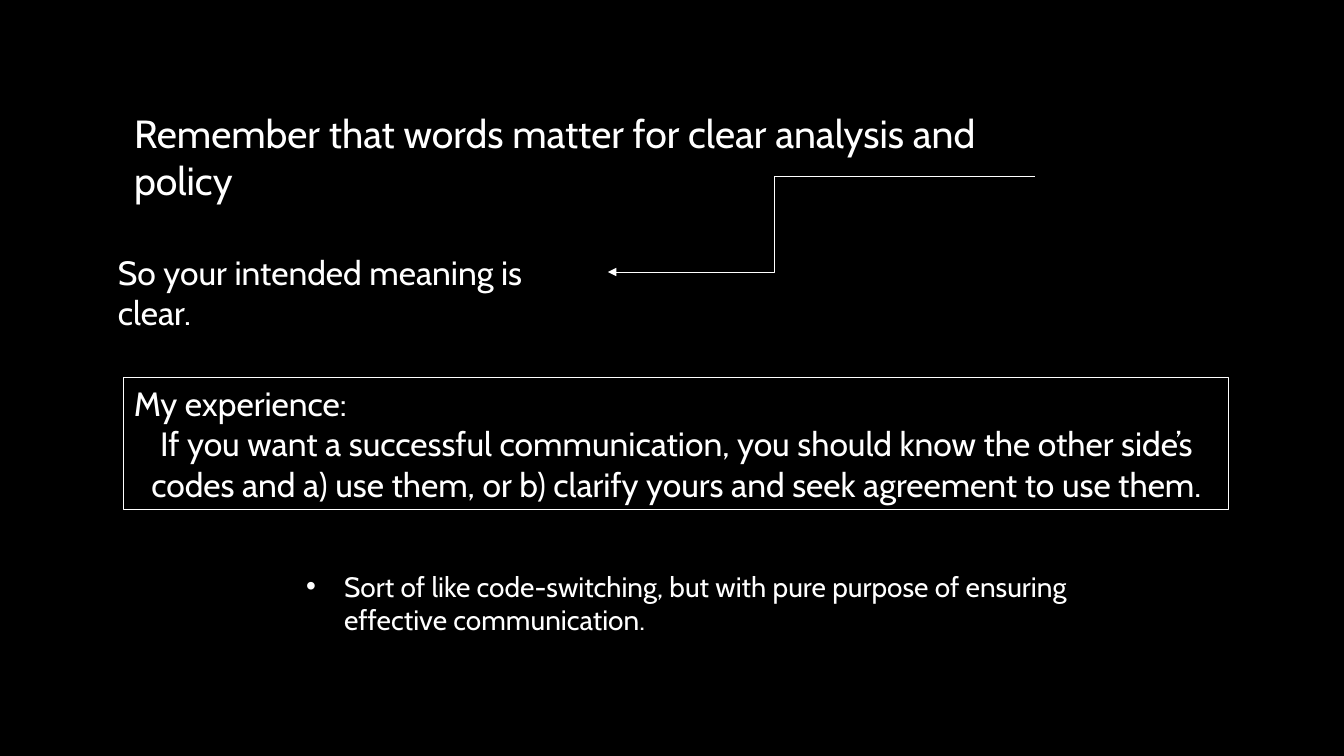
from dataclasses import dataclass

from lxml import etree
from pptx import Presentation
from pptx.dml.color import RGBColor
from pptx.enum.shapes import MSO_CONNECTOR, MSO_SHAPE
from pptx.enum.text import MSO_ANCHOR, MSO_AUTO_SIZE, PP_ALIGN
from pptx.oxml.ns import qn
from pptx.shapes.autoshape import Shape
from pptx.slide import Slide
from pptx.util import Emu, Pt

LEFT, CENTER = PP_ALIGN.LEFT, PP_ALIGN.CENTER
TOP = MSO_ANCHOR.TOP
GROW = MSO_AUTO_SIZE.SHAPE_TO_FIT_TEXT
ELBOW, RECTANGLE = MSO_CONNECTOR.ELBOW, MSO_SHAPE.RECTANGLE

PX_PER_INCH = 100.8
FONT = "Cabin"
WHITE, BLACK = "FFFFFF", "000000"
TITLE_AND_CONTENT = 1


def px(length: int) -> Emu:
    return Emu(round(length * 914400 / PX_PER_INCH))


def color(code: str) -> RGBColor:
    return RGBColor.from_string(code)


@dataclass(frozen=True)
class Box:
    left: int
    top: int
    width: int
    height: int

    def emu(self) -> tuple[Emu, Emu, Emu, Emu]:
        return px(self.left), px(self.top), px(self.width), px(self.height)


@dataclass(frozen=True)
class Line:
    text: str
    align: PP_ALIGN = LEFT
    space_after: int = 0
    hanging: int = 0


@dataclass(frozen=True)
class Statement:
    box: Box
    size: int
    lines: tuple[Line, ...]


HEADLINE = Statement(
    Box(124, 104, 960, 57), 28,
    (Line("Remember that words matter for clear analysis and policy"),))
MEANING = Statement(
    Box(108, 247, 494, 50), 24, (Line("So your intended meaning is clear."),))
EXPERIENCE = Statement(
    Box(124, 378, 1105, 132), 24,
    (Line("My experience:"),
     Line("If you want a successful communication, you should know the other "
          "side’s codes and a) use them, or b) clarify yours and seek "
          "agreement to use them.", CENTER)))
CODE_SWITCHING = Statement(
    Box(296, 564, 840, 78), 20,
    (Line("Sort of like code-switching, but with pure purpose of ensuring "
          "effective communication.", space_after=6, hanging=38),))


def write(shape: Shape, statement: Statement) -> None:
    shape.left, shape.top, shape.width, shape.height = statement.box.emu()
    frame = shape.text_frame
    frame.word_wrap = True
    frame.auto_size = GROW
    frame.vertical_anchor = TOP
    for index, line in enumerate(statement.lines):
        paragraph = frame.add_paragraph() if index else frame.paragraphs[0]
        if line.hanging:
            properties = paragraph._p.get_or_add_pPr()
            properties.set("marL", str(px(line.hanging)))
            properties.set("indent", str(-px(line.hanging)))
            bullet_font = etree.SubElement(properties, qn("a:buFont"))
            bullet_font.set("typeface", "Arial")
            etree.SubElement(properties, qn("a:buChar")).set("char", "•")
        paragraph.alignment = line.align
        paragraph.space_before = Pt(0)
        paragraph.space_after = Pt(line.space_after)
        run = paragraph.add_run()
        run.text = line.text
        run.font.name = FONT
        run.font.size = Pt(statement.size)
        run.font.color.rgb = color(WHITE)


def add_elbow_arrow(slide: Slide, start: tuple[int, int], end: tuple[int, int],
                    bend: float) -> None:
    arrow = slide.shapes.add_connector(ELBOW, *map(px, start + end))
    arrow.line.color.rgb = color(WHITE)
    arrow.line.width = Pt(0.5)
    # Place of the bend, as a share of the width
    guides = arrow._element.spPr.find(qn("a:prstGeom")).get_or_add_avLst()
    etree.SubElement(guides, qn("a:gd"), name="adj1",
                     fmla=f"val {round(bend * 100000)}")
    etree.SubElement(arrow.line._get_or_add_ln(), qn("a:tailEnd"),
                     type="triangle")
    etree.SubElement(arrow._element.spPr, qn("a:effectLst"))


def main() -> None:
    deck = Presentation()
    deck.slide_width, deck.slide_height = px(1344), px(756)
    slide = deck.slides.add_slide(deck.slide_layouts[TITLE_AND_CONTENT])
    slide.background.fill.solid()
    slide.background.fill.fore_color.rgb = color(BLACK)

    # Headline and the meaning it leads to
    write(slide.shapes.title, HEADLINE)
    add_elbow_arrow(slide, (1035, 176), (608, 272), bend=0.61)
    write(slide.shapes.add_textbox(*MEANING.box.emu()), MEANING)

    # Framed experience
    frame = slide.shapes.add_shape(RECTANGLE, *EXPERIENCE.box.emu())
    frame.shadow.inherit = False
    frame.fill.background()
    frame.line.color.rgb = color(WHITE)
    frame.line.width = Pt(0.75)
    write(frame, EXPERIENCE)

    # Closing bullet
    write(slide.placeholders[1], CODE_SWITCHING)
    deck.save("out.pptx")


if __name__ == "__main__":
    main()
